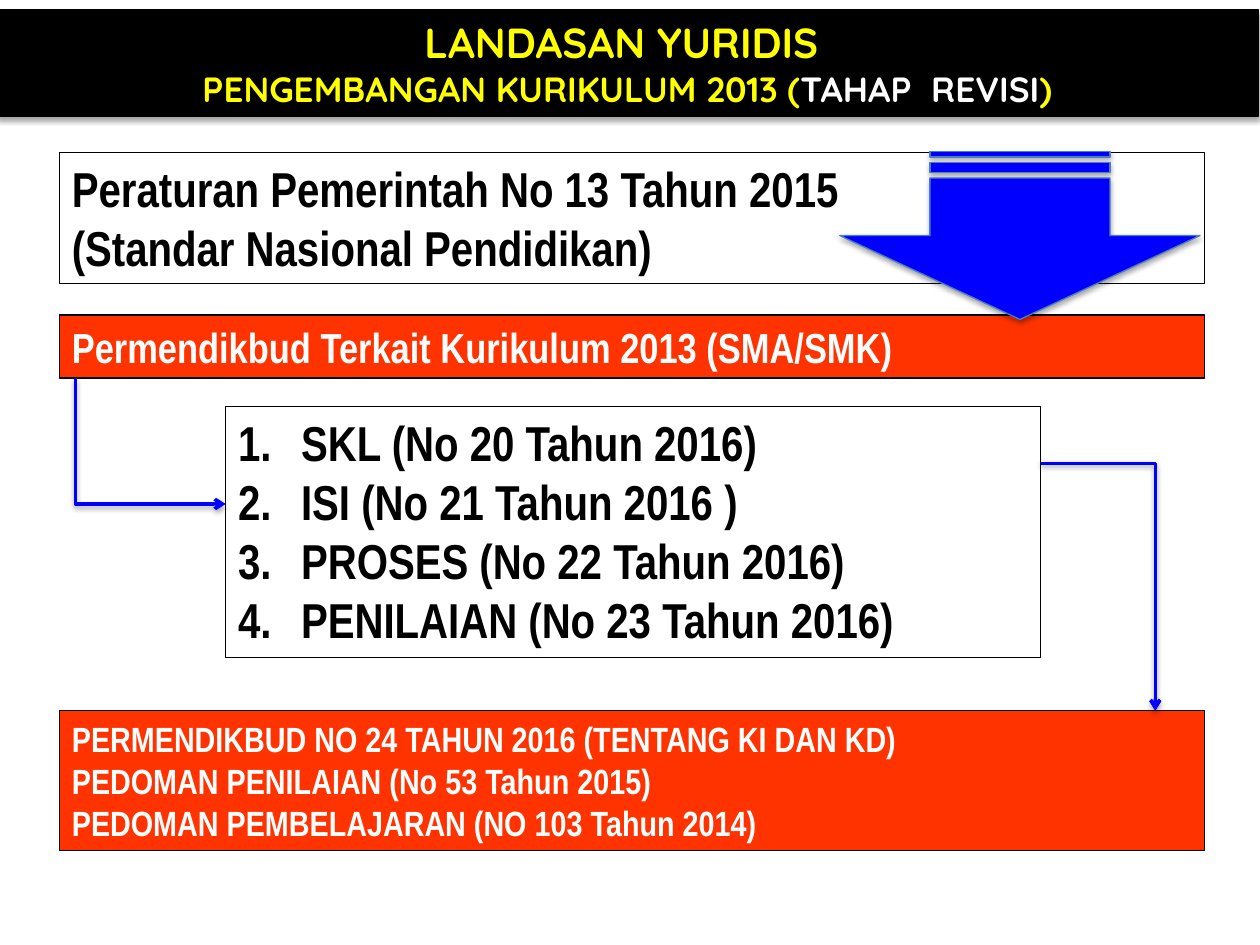
from dataclasses import dataclass

from lxml.etree import SubElement
from pptx import Presentation
from pptx.dml.color import RGBColor
from pptx.enum.shapes import MSO_CONNECTOR, MSO_SHAPE
from pptx.enum.text import MSO_ANCHOR, MSO_AUTO_SIZE, PP_ALIGN
from pptx.oxml.ns import qn
from pptx.util import Cm, Pt


@dataclass(frozen=True)
class Theme:
    black: str = "000000"
    white: str = "FFFFFF"
    yellow: str = "FFFF00"
    red: str = "FF3300"
    blue: str = "0000FF"
    arrow_outline: str = "4B7EBC"
    title_font: str = "Quicksand"
    body_font: str = "Arial Narrow"
    large: int = 28
    medium: int = 24
    small: int = 20
    border: float = 0.75
    connector: float = 2


class SlideBuilder:
    """Draws styled elements on the current slide."""

    def __init__(self, slide, theme):
        self.slide = slide
        self.theme = theme

    def add_shadow(self, properties, distance):
        effects = properties.find(qn("a:effectLst"))
        if effects is None:
            effects = SubElement(properties, qn("a:effectLst"))
        shadow = SubElement(
            effects, qn("a:outerShdw"), blurRad=str(Pt(3.15)), dist=str(Pt(distance)),
            dir="5400000", rotWithShape="0")
        color = SubElement(shadow, qn("a:srgbClr"), val=self.theme.black)
        SubElement(color, qn("a:alpha"), val="35000")

    def add_shape(self, kind, bounds, fill=None, outline=None, shadow=False):
        shape = self.slide.shapes.add_shape(kind, *map(Cm, bounds))
        shape.shadow.inherit = False
        if fill:
            shape.fill.solid()
            shape.fill.fore_color.rgb = RGBColor.from_string(fill)
        else:
            shape.fill.background()
        shape.line.color.rgb = RGBColor.from_string(outline or self.theme.black)
        shape.line.width = Pt(self.theme.border)
        if shadow:
            self.add_shadow(shape.element.spPr, 1.8)
        return shape

    def add_run(self, paragraph, text, font, size, color):
        run = paragraph.add_run()
        run.text = text
        font_format = {"name": font, "size": Pt(size), "bold": True}
        for attribute, value in font_format.items():
            setattr(run.font, attribute, value)
        run.font.color.rgb = RGBColor.from_string(color)

    def add_box(self, bounds, paragraphs, font, fill=None, align=PP_ALIGN.LEFT,
                anchor=MSO_ANCHOR.TOP, numbered=False, shadow=False):
        shape = self.add_shape(MSO_SHAPE.RECTANGLE, bounds, fill, shadow=shadow)
        frame = shape.text_frame
        frame_format = {
            "word_wrap": True,
            "auto_size": MSO_AUTO_SIZE.SHAPE_TO_FIT_TEXT,
            "vertical_anchor": anchor,
        }
        for attribute, value in frame_format.items():
            setattr(frame, attribute, value)
        for index, runs in enumerate(paragraphs):
            paragraph = frame.add_paragraph() if index else frame.paragraphs[0]
            paragraph.alignment = align
            if numbered:
                self.number(paragraph)
            for text, size, color in runs:
                self.add_run(paragraph, text, font, size, color)

    def add_list_box(self, bounds, lines, size, color, **options):
        paragraphs = [[(line, size, color)] for line in lines]
        self.add_box(bounds, paragraphs, self.theme.body_font, **options)

    def number(self, paragraph):
        properties = paragraph._p.get_or_add_pPr()
        indent = Cm(1.27)
        properties.set("marL", str(indent))
        properties.set("indent", str(-indent))
        SubElement(properties, qn("a:buFont"), typeface="+mj-lt")
        SubElement(properties, qn("a:buAutoNum"), type="arabicPeriod")

    def add_elbow(self, start, end, across_first=False):
        (left, top), (right, bottom) = start, end
        if across_first:
            center_x, center_y = (left + right) / 2, (top + bottom) / 2
            half_width, half_height = (bottom - top) / 2, (right - left) / 2
            left, right = center_x + half_width, center_x - half_width
            top, bottom = center_y - half_height, center_y + half_height
        connector = self.slide.shapes.add_connector(
            MSO_CONNECTOR.ELBOW, *map(Cm, (left, top, right, bottom)))
        connector.line.color.rgb = RGBColor.from_string(self.theme.blue)
        connector.line.width = Pt(self.theme.connector)
        properties = connector.element.spPr
        if across_first:
            properties.find(qn("a:xfrm")).set("rot", "16200000")
        adjustments = properties.find(qn("a:prstGeom")).find(qn("a:avLst"))
        SubElement(adjustments, qn("a:gd"), name="adj1", fmla="val 0")
        SubElement(properties.find(qn("a:ln")), qn("a:tailEnd"), type="arrow")
        self.add_shadow(properties, 1.6)


def main():
    presentation = Presentation()
    presentation.slide_width, presentation.slide_height = Cm(25.4), Cm(19.05)
    theme = Theme()
    slide = presentation.slides.add_slide(presentation.slide_layouts[6])
    builder = SlideBuilder(slide, theme)

    title = [
        [("LANDASAN YURIDIS ", theme.medium, theme.yellow)],
        [("PENGEMBANGAN KURIKULUM 2013 (", theme.small, theme.yellow),
         ("TAHAP  REVISI", theme.small, theme.white),
         (")", theme.small, theme.yellow)],
    ]
    builder.add_box((-0.08, 0.2, 25.45, 2.14), title, theme.title_font, fill=theme.black,
                    align=PP_ALIGN.CENTER, anchor=MSO_ANCHOR.MIDDLE, shadow=True)

    left, width = 1.2, 23.08
    builder.add_list_box(
        (left, 3.07, width, 2.65),
        ["Peraturan Pemerintah No 13 Tahun 2015", "(Standar Nasional Pendidikan)"],
        theme.large, theme.black)
    builder.add_list_box(
        (left, 6.35, width, 1.27), ["Permendikbud Terkait Kurikulum 2013 (SMA/SMK)"],
        theme.medium, theme.white, fill=theme.red)
    builder.add_list_box(
        (4.55, 8.2, 16.43, 5.05),
        ["SKL (No 20 Tahun 2016)", "ISI (No 21 Tahun 2016 )",
         "PROSES (No 22 Tahun 2016)", "PENILAIAN (No 23 Tahun 2016)"],
        theme.large, theme.black, numbered=True)

    arrow = builder.add_shape(MSO_SHAPE.STRIPED_RIGHT_ARROW, (18.87, 1.12, 3.38, 7.26),
                              theme.blue, theme.arrow_outline, shadow=True)
    arrow.rotation = 90

    builder.add_list_box(
        (left, 14.33, width, 2.82),
        ["PERMENDIKBUD NO 24 TAHUN 2016 (TENTANG KI DAN KD)",
         "PEDOMAN PENILAIAN (No 53 Tahun 2015)",
         "PEDOMAN PEMBELAJARAN (NO 103 Tahun 2014)"],
        theme.small, theme.white, fill=theme.red)

    builder.add_elbow((1.52, 7.62), (4.55, 10.16))
    builder.add_elbow((20.98, 9.34), (23.29, 14.33), across_first=True)
    presentation.save("out.pptx")


if __name__ == "__main__":
    main()
